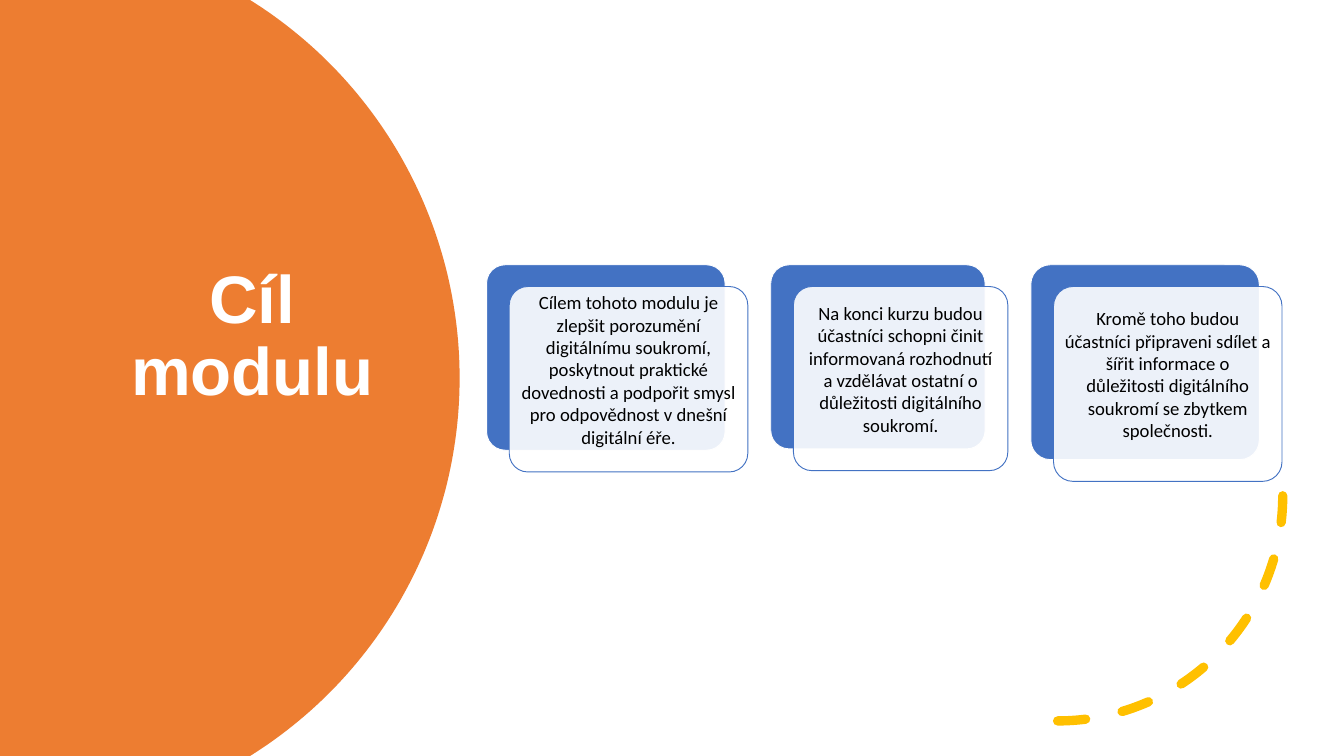
import math

import pptx
import pptx.dml.color
import pptx.enum.dml
import pptx.enum.shapes
import pptx.enum.text
import pptx.oxml
import pptx.oxml.ns
import pptx.util
from lxml import etree

Pt = pptx.util.Pt
SHAPE = pptx.enum.shapes.MSO_SHAPE
WIDTH, HEIGHT = 1440, 810
COLOURS = {
    "orange": "ED7D31",
    "blue": "4372C3",
    "yellow": "FFC000",
    "white": "FFFFFF",
    "black": "000000",
}


def colour(name):
    return pptx.dml.color.RGBColor.from_string(COLOURS[name])


class Painter:
    """Holds the style and the current slide."""

    title_font, body_font = "Arial", "Calibri"
    card_top, shift_x, shift_y, text_margin = 283.7, 24.3, 23.3, 5.9

    def __init__(self, page):
        self.page = page

    def disc(self, centre_x, radius):
        """Draw a disc cut off by the left, top and bottom slide edges."""
        centre_y = HEIGHT / 2
        limit = math.asin(centre_y / radius)
        steps = 120
        angles = [limit * (2 * i / steps - 1) for i in range(steps + 1)]
        arc = [(centre_x + radius * math.cos(a), centre_y + radius * math.sin(a))
               for a in angles]
        builder = self.page.shapes.build_freeform(0, 0, scale=Pt(1) / 100)
        builder.add_line_segments(
            [(x * 100, y * 100) for x, y in arc] + [(0, HEIGHT * 100)])
        shape = builder.convert_to_shape()
        shape.shadow.inherit = False
        shape.fill.solid()
        shape.fill.fore_color.rgb = colour("orange")
        shape.line.fill.background()
        # Send the disc behind the title
        self.page.shapes._spTree.insert(2, shape._element)

    def text(self, box, words, font, size, ink, bold=False):
        frame = box.text_frame
        frame.word_wrap = True
        frame.auto_size = pptx.enum.text.MSO_AUTO_SIZE.NONE
        frame.vertical_anchor = pptx.enum.text.MSO_ANCHOR.MIDDLE
        para = frame.paragraphs[0]
        para.text = words
        para.alignment = pptx.enum.text.PP_ALIGN.CENTER
        para.font.name = font
        para.font.size = Pt(size)
        para.font.bold = bold
        para.font.color.rgb = colour(ink)
        return frame, para

    def title(self, words, left, top, width, height):
        box = self.page.shapes.title
        box.left, box.top, box.width, box.height = map(Pt, (left, top, width, height))
        frame, para = self.text(box, words, self.title_font, 72, "white", True)
        frame.margin_left = frame.margin_right = Pt(7.2)
        frame.margin_top, frame.margin_bottom = Pt(3.6), Pt(79)
        para.line_spacing = 0.9

    def arc(self, left, top, size):
        shape = self.page.shapes.add_shape(
            SHAPE.ARC, Pt(left), Pt(top), Pt(size), Pt(size))
        shape.shadow.inherit = False
        shape.fill.background()
        shape.rotation = 180
        shape._element.spPr.find(pptx.oxml.ns.qn("a:xfrm")).set("flipH", "1")
        shape.line.color.rgb = colour("yellow")
        shape.line.width = Pt(10)
        shape.line.dash_style = pptx.enum.dml.MSO_LINE.DASH
        shape.line._ln.set("cap", "rnd")

    def panel(self, left, top, width, height, fill, line, opacity=100):
        shape = self.page.shapes.add_shape(
            SHAPE.ROUNDED_RECTANGLE, Pt(left), Pt(top), Pt(width), Pt(height))
        shape.adjustments[0] = 0.1
        shape.shadow.inherit = False
        shape.fill.solid()
        shape.fill.fore_color.rgb = colour(fill)
        shape.line.color.rgb = colour(line)
        shape.line.width = Pt(1)
        if opacity < 100:
            tone = shape._element.spPr.find(
                pptx.oxml.ns.qn("a:solidFill"))[0]
            alpha = etree.SubElement(tone, pptx.oxml.ns.qn("a:alpha"))
            alpha.set("val", str(opacity * 1000))

    def card(self, left, width, height, words):
        """Draw a blue panel, a shifted translucent panel and its text."""
        front_left, front_top = left + self.shift_x, self.card_top + self.shift_y
        self.panel(left, self.card_top, width, height, "blue", "white")
        self.panel(front_left, front_top, width, height, "white", "blue", 90)
        margin = self.text_margin
        box = self.page.shapes.add_textbox(
            Pt(front_left + margin), Pt(front_top + margin),
            Pt(width - 2 * margin), Pt(height - 2 * margin))
        frame, _ = self.text(box, words, self.body_font, 20, "black")
        frame.margin_left = frame.margin_right = Pt(6)
        frame.margin_top, frame.margin_bottom = Pt(0), Pt(21)


def main():
    deck = pptx.Presentation()
    deck.slide_width, deck.slide_height = Pt(WIDTH), Pt(HEIGHT)
    painter = Painter(deck.slides.add_slide(deck.slide_layouts[5]))

    # Title on the orange disc
    painter.disc(15, 477.5)
    painter.title("Cíl modulu", 81.4, 136, 378, 527)

    # Dashed arc
    painter.arc(892, 290, 482.4)

    # Goal cards: left, width, height, text
    cards = [
        (521.3, 255.6, 198.7,
         "Cílem tohoto modulu je zlepšit porozumění digitálnímu soukromí, "
         "poskytnout praktické dovednosti a podpořit smysl pro odpovědnost "
         "v dnešní digitální éře."),
        (825.8, 229.7, 197.3,
         "Na konci kurzu budou účastníci schopni činit informovaná rozhodnutí "
         "a vzdělávat ostatní o důležitosti digitálního soukromí."),
        (1104.5, 244.8, 208.8,
         "Kromě toho budou účastníci připraveni sdílet a šířit informace o "
         "důležitosti digitálního soukromí se zbytkem společnosti."),
    ]
    for card in cards:
        painter.card(*card)

    deck.save("out.pptx")


if __name__ == "__main__":
    main()
